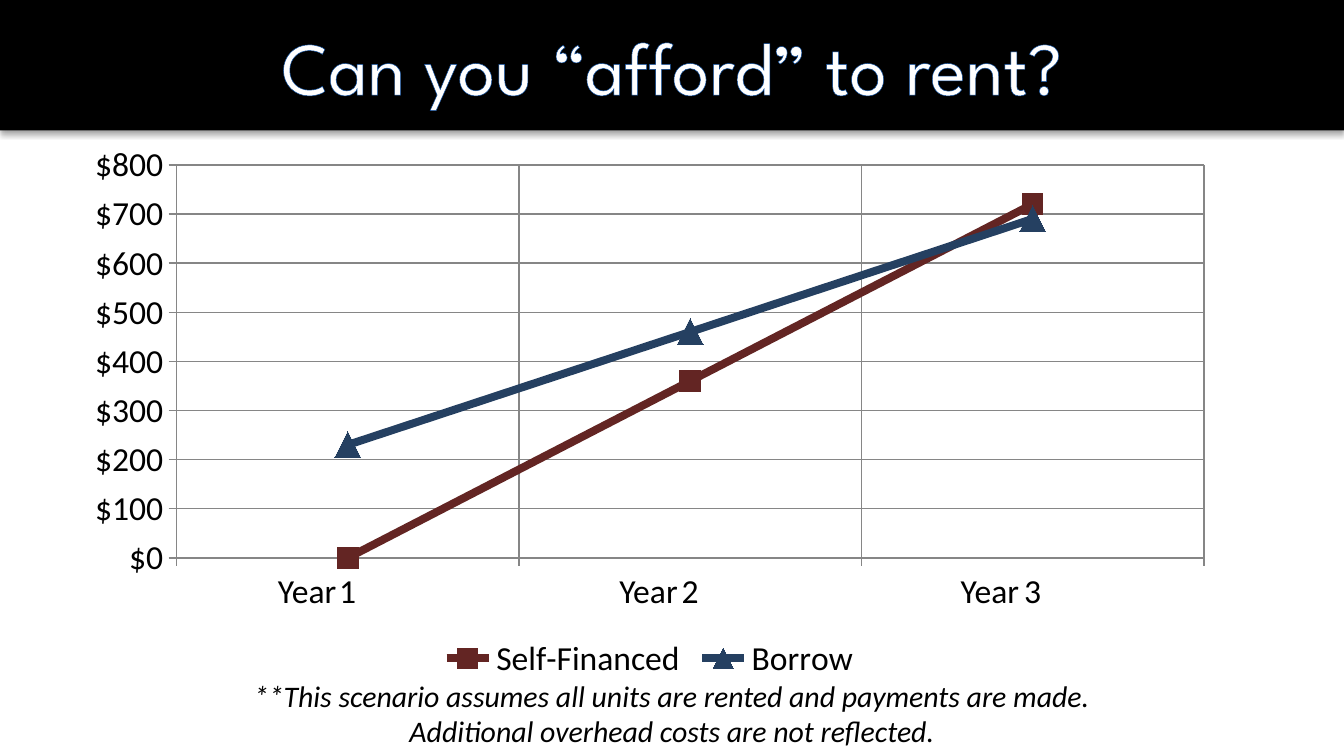
import lxml.etree
import pptx
import pptx.chart.data
import pptx.dml.color
import pptx.enum.chart
import pptx.enum.shapes
import pptx.enum.text
import pptx.oxml
import pptx.oxml.ns
import pptx.util

Inches = pptx.util.Inches
Pt = pptx.util.Pt
BODY_FONT = "Calibri"
GRID_COLOR = "868686"


def color(hex_code):
    return pptx.dml.color.RGBColor.from_string(hex_code)


def make_element(xml):
    namespaces = pptx.oxml.ns.nsdecls("a", "c")
    return pptx.oxml.parse_xml(xml.replace(">", f" {namespaces}>", 1))


def set_font(font, name, size, hex_code, italic=False):
    font.name = name
    font.size = Pt(size)
    font.italic = italic
    font.color.rgb = color(hex_code)


def add_title(slide, left, top, width, height):
    banner = slide.shapes.add_shape(
        pptx.enum.shapes.MSO_SHAPE.RECTANGLE,
        Inches(left), Inches(top), Inches(width), Inches(height))
    banner.fill.solid()
    banner.fill.fore_color.rgb = color("000000")
    banner.line.fill.background()
    banner.element.spPr.append(make_element(
        f'<a:effectLst><a:outerShdw blurRad="{Pt(3.1)}" dist="{Pt(1.8)}" dir="5400000" '
        'rotWithShape="0"><a:srgbClr val="000000"><a:alpha val="35000"/></a:srgbClr>'
        '</a:outerShdw></a:effectLst>'))

    title = slide.shapes.title
    title.element.addprevious(banner.element)
    title.left, title.top = Inches(left), Inches(top + 0.1)
    title.width, title.height = Inches(width), Inches(height - 0.2)
    title.fill.solid()
    title.fill.fore_color.rgb = color("000000")
    title.text_frame.vertical_anchor = pptx.enum.text.MSO_ANCHOR.MIDDLE
    paragraph = title.text_frame.paragraphs[0]
    paragraph.alignment = pptx.enum.text.PP_ALIGN.CENTER
    run = paragraph.add_run()
    run.text = "Can you “afford” to rent?"
    set_font(run.font, "League Spartan", 40, "FFFFFF")
    run_properties = run.font.fill._xPr
    run_properties.insert(0, make_element(
        f'<a:ln w="{Pt(1)}"><a:solidFill><a:srgbClr val="054697"/></a:solidFill></a:ln>'))


def add_text(slide, text, left, top, width, height, size, centered=False, italic=False, wrap=True):
    box = slide.shapes.add_textbox(Inches(left), Inches(top), Inches(width), Inches(height))
    box.text_frame.word_wrap = wrap
    paragraph = box.text_frame.paragraphs[0]
    paragraph.text = text
    if centered:
        paragraph.alignment = pptx.enum.text.PP_ALIGN.CENTER
    set_font(paragraph.font, BODY_FONT, size, "000000", italic)


def set_plot_layout(chart, x, y, width, height):
    plot_area = chart.element.find(".//" + pptx.oxml.ns.qn("c:plotArea"))
    for layout in plot_area.findall(pptx.oxml.ns.qn("c:layout")):
        plot_area.remove(layout)
    plot_area.insert(0, make_element(
        '<c:layout><c:manualLayout><c:layoutTarget val="inner"/>'
        '<c:xMode val="edge"/><c:yMode val="edge"/>'
        f'<c:x val="{x}"/><c:y val="{y}"/><c:w val="{width}"/><c:h val="{height}"/>'
        '</c:manualLayout></c:layout>'))


def style_axis(axis):
    axis.has_major_gridlines = True
    axis.major_tick_mark = pptx.enum.chart.XL_TICK_MARK.OUTSIDE
    axis.minor_tick_mark = pptx.enum.chart.XL_TICK_MARK.NONE
    for line in (axis.format.line, axis.major_gridlines.format.line):
        line.width = Pt(0.75)
        line.color.rgb = color(GRID_COLOR)


def add_cost_chart(slide, left, top, width, height):
    marker_style = pptx.enum.chart.XL_MARKER_STYLE
    series_rows = [
        ("Self-Financed", (0, 360, 720), "632523", marker_style.SQUARE, 11),
        ("Borrow", (230, 460, 690), "254061", marker_style.TRIANGLE, 14),
    ]
    chart_data = pptx.chart.data.CategoryChartData()
    chart_data.categories = ["1", "2", "3"]
    for name, values, *_ in series_rows:
        chart_data.add_series(name, values)
    chart = slide.shapes.add_chart(
        pptx.enum.chart.XL_CHART_TYPE.LINE_MARKERS,
        Inches(left), Inches(top), Inches(width), Inches(height), chart_data).chart
    set_font(chart.font, BODY_FONT, 18, "000000")
    chart.has_title = False
    chart.has_legend = True
    chart.legend.position = pptx.enum.chart.XL_LEGEND_POSITION.BOTTOM
    chart.legend.include_in_layout = False
    set_plot_layout(chart, 0.09, 0.06, 0.89, 0.71)

    style_axis(chart.category_axis)
    style_axis(chart.value_axis)
    chart.value_axis.minimum_scale = 0
    chart.value_axis.maximum_scale = 800
    chart.value_axis.major_unit = 100
    chart.value_axis.tick_labels.number_format = r"\$#,##0;[Red]\$#,##0"
    chart.value_axis.tick_labels.number_format_is_linked = False

    chart.plots[0].vary_by_categories = False
    for series, (_, _, hex_code, style, size) in zip(chart.plots[0].series, series_rows):
        series.smooth = False
        series.format.line.width = Pt(4.25)
        series.format.line.color.rgb = color(hex_code)
        series.marker.style = style
        series.marker.size = size
        series.marker.format.fill.solid()
        series.marker.format.fill.fore_color.rgb = color(hex_code)
        series.marker.format.line.color.rgb = color(hex_code)

    for index in range(3):
        add_text(slide, "Year", left + 1.43 + 2.54 * index, top + 3.21, 0.64, 0.4, 18, wrap=False)


def main():
    presentation = pptx.Presentation()
    presentation.slide_width = Inches(10)
    presentation.slide_height = presentation.slide_width * 9 // 16
    slide = presentation.slides.add_slide(presentation.slide_layouts[5])
    add_title(slide, 0, 0, 10, 0.97)
    add_cost_chart(slide, 0.54, 0.98, 8.59, 4.12)
    add_text(
        slide,
        "**This scenario assumes all units are rented and payments are made. "
        "Additional overhead costs are not reflected.",
        1.65, 4.99, 6.7, 0.64, 16, centered=True, italic=True)
    presentation.save("out.pptx")


if __name__ == "__main__":
    main()
